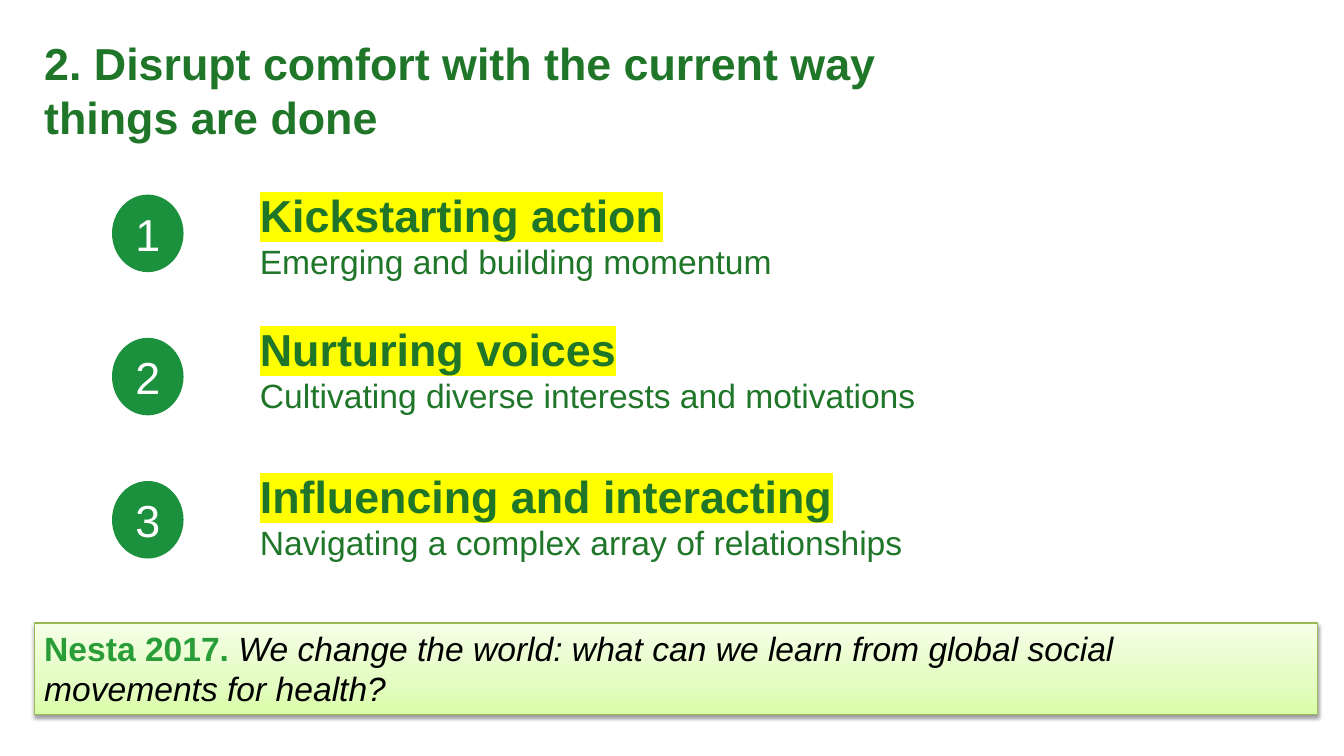
from lxml.etree import SubElement
from pptx import Presentation
from pptx.dml.color import RGBColor
from pptx.enum.shapes import MSO_SHAPE
from pptx.enum.text import MSO_ANCHOR, PP_ALIGN
from pptx.oxml import parse_xml
from pptx.oxml.ns import nsdecls, qn
from pptx.util import Pt

DARK, GREEN, CITE = "1F7629", "1C913D", "299D37"
YELLOW, WHITE, BLACK, BORDER = "FFFF00", "FFFFFF", "000000", "98B955"


def rgb(value):
    return RGBColor.from_string(value)


class Deck:
    font = "Arial"
    big, small = 32, 24

    def __init__(self, prs):
        self.s = prs.slides.add_slide(prs.slide_layouts[6])

    def run(self, p, text, size, color, bold=False, italic=False, mark=None):
        r = p.add_run()
        r.text = text
        r.font.size = Pt(size)
        r.font.bold, r.font.italic = bold, italic
        r.font.color.rgb = rgb(color)
        if mark:
            highlight = SubElement(r.font._element, qn("a:highlight"))
            SubElement(highlight, qn("a:srgbClr")).set("val", mark)
        r.font.name = self.font

    def text(self, x, y, w, h):
        tf = self.s.shapes.add_textbox(Pt(x), Pt(y), Pt(w), Pt(h)).text_frame
        tf.word_wrap = True
        return tf.paragraphs[0]

    def point(self, y, w, heading, detail):
        p = self.text(178.56, y, w, 75)
        self.run(p, heading, self.big, DARK, bold=True, mark=YELLOW)
        p.add_line_break()
        self.run(p, detail, self.small, DARK)

    def badge(self, x, y, w, h, number):
        sp = self.s.shapes.add_shape(MSO_SHAPE.OVAL, Pt(x), Pt(y), Pt(w), Pt(h))
        sp.shadow.inherit = False
        sp.fill.solid()
        sp.fill.fore_color.rgb = rgb(GREEN)
        sp.line.fill.background()
        tf = sp.text_frame
        tf.margin_left = tf.margin_right = Pt(5)
        tf.margin_top = tf.margin_bottom = Pt(3)
        tf.vertical_anchor = MSO_ANCHOR.MIDDLE
        p = tf.paragraphs[0]
        p.alignment = PP_ALIGN.CENTER
        self.run(p, str(number), self.big, WHITE)

    def panel(self, x, y, w, h, stops):
        sp = self.s.shapes.add_shape(MSO_SHAPE.RECTANGLE, Pt(x), Pt(y), Pt(w), Pt(h))
        # Gradient running upwards
        marks = "".join(
            f'<a:gs pos="{pos * 1000}"><a:srgbClr val="{color}"/></a:gs>'
            for pos, color in stops)
        sp._element.spPr.append(parse_xml(
            f'<a:gradFill {nsdecls("a")} rotWithShape="1"><a:gsLst>{marks}</a:gsLst>'
            '<a:lin ang="16200000" scaled="0"/></a:gradFill>'))
        sp.line.color.rgb = rgb(BORDER)
        sp.line.width = Pt(0.75)
        # Soft shadow below
        sp.shadow.inherit = False
        sp._element.spPr.find(qn("a:effectLst")).append(parse_xml(
            f'<a:outerShdw {nsdecls("a")} blurRad="{Pt(3.1)}" dist="{Pt(1.6)}" '
            f'dir="5400000" rotWithShape="0"><a:srgbClr val="{BLACK}">'
            '<a:alpha val="38000"/></a:srgbClr></a:outerShdw>'))
        tf = sp.text_frame
        tf.word_wrap = True
        tf.vertical_anchor = MSO_ANCHOR.TOP
        p = tf.paragraphs[0]
        p.alignment = PP_ALIGN.LEFT
        return p


def main():
    prs = Presentation()
    prs.slide_width, prs.slide_height = Pt(960), Pt(540)
    deck = Deck(prs)

    # Title
    p = deck.text(24.5, 22.3, 673, 85)
    deck.run(p, "2. Disrupt comfort with the current way things are done",
             deck.big, DARK, bold=True)

    # Numbered points
    points = [
        (130.3, 781, "Kickstarting action", "Emerging and building momentum"),
        (226.1, 702, "Nurturing voices",
         "Cultivating diverse interests and motivations"),
        (331.2, 781, "Influencing and interacting",
         "Navigating a complex array of relationships"),
    ]
    for i, point in enumerate(points):
        deck.point(*point)
        deck.badge(80, 139 + 102.3 * i, 51.1, 55.4, i + 1)

    # Citation
    p = deck.panel(24.5, 445, 916.6, 65.5,
                   [(0, "DAFDA7"), (35, "E4FCC2"), (100, "F5FFE7")])
    deck.run(p, "Nesta 2017. ", deck.small, CITE, bold=True)
    deck.run(p, "We change the world: what can we learn from global social",
             deck.small, BLACK, italic=True)
    p.add_line_break()
    deck.run(p, "movements for health?", deck.small, BLACK, italic=True)

    prs.save("out.pptx")


if __name__ == "__main__":
    main()
